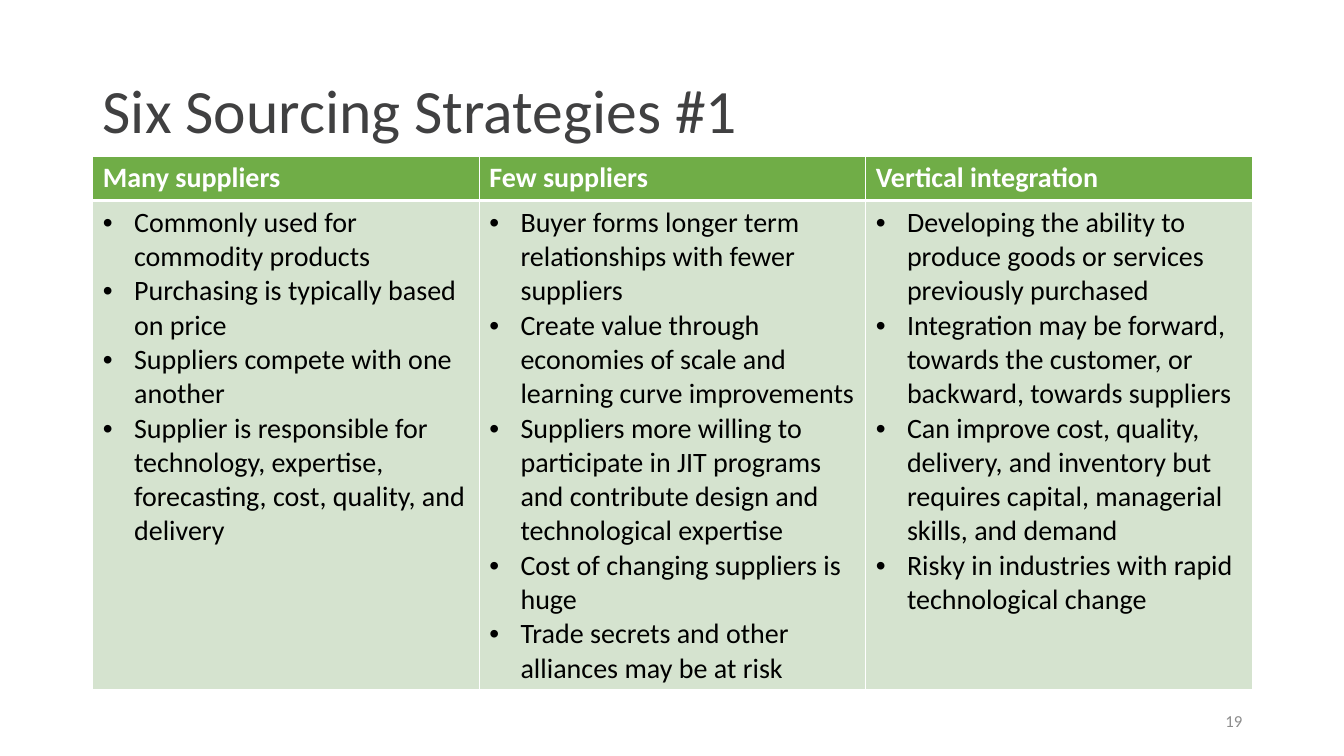
from lxml.etree import SubElement
from pptx import Presentation
from pptx.dml.color import RGBColor
from pptx.enum.text import MSO_ANCHOR, PP_ALIGN
from pptx.oxml.ns import qn
from pptx.util import Inches, Pt

COLORS = {
    "title": "404041",
    "head": "70AD47",
    "body": "D5E3CF",
    "white": "FFFFFF",
    "black": "000000",
    "number": "8C8C8C",
}

PLANS = {
    "Many suppliers": [
        "Commonly used for commodity products",
        "Purchasing is typically based on price",
        "Suppliers compete with one another",
        "Supplier is responsible for technology, expertise, forecasting, cost, quality, and delivery",
    ],
    "Few suppliers": [
        "Buyer forms longer term relationships with fewer suppliers",
        "Create value through economies of scale and learning curve improvements",
        "Suppliers more willing to participate in JIT programs and contribute design and technological expertise",
        "Cost of changing suppliers is huge",
        "Trade secrets and other alliances may be at risk",
    ],
    "Vertical integration": [
        "Developing the ability to produce goods or services previously purchased",
        "Integration may be forward, towards the customer, or backward, towards suppliers",
        "Can improve cost, quality, delivery, and inventory but requires capital, managerial skills, and demand",
        "Risky in industries with rapid technological change",
    ],
}


def style(para, size, color, bold=False):
    """Set the font of a paragraph."""
    font = para.font
    font.name = "Calibri"
    font.size = Pt(size)
    font.bold = bold
    font.color.rgb = RGBColor.from_string(COLORS[color])


def add_label(slide, box, text, size, color, align=PP_ALIGN.LEFT, spacing=1.0):
    """Place one line of text, centred vertically in its box."""
    frame = slide.shapes.add_textbox(*map(Inches, box)).text_frame
    frame.word_wrap = True
    frame.vertical_anchor = MSO_ANCHOR.MIDDLE
    para = frame.paragraphs[0]
    para.text = text
    para.alignment = align
    para.line_spacing = spacing
    style(para, size, color)


def add_bullet(para):
    """Give a paragraph a hanging round bullet."""
    props = para._p.get_or_add_pPr()
    props.set("marL", str(Inches(0.31)))
    props.set("indent", str(-Inches(0.31)))
    SubElement(props, qn("a:buFont"), typeface="Arial")
    SubElement(props, qn("a:buChar"), char="•")


def paint(cell, color, base):
    """Give a cell white borders and a solid fill."""
    props = cell._tc.get_or_add_tcPr()
    for side, width in (("L", 1), ("R", 1), ("T", 1), ("B", base)):
        line = SubElement(props, qn(f"a:ln{side}"), w=str(Pt(width)))
        fill = SubElement(line, qn("a:solidFill"))
        SubElement(fill, qn("a:srgbClr"), val=COLORS["white"])
    cell.fill.solid()
    cell.fill.fore_color.rgb = RGBColor.from_string(COLORS[color])


def add_plans(slide, box, head):
    """Build the table with one column for each strategy."""
    table = slide.shapes.add_table(2, len(PLANS), *map(Inches, box)).table
    table.rows[0].height = Inches(head)
    table.rows[1].height = Inches(box[3] - head)
    for col, (name, points) in enumerate(PLANS.items()):
        table.columns[col].width = Inches(box[2] / len(PLANS))
        top, body = table.cell(0, col), table.cell(1, col)
        paint(top, "head", 3)
        paint(body, "body", 1)
        top.text = name
        style(top.text_frame.paragraphs[0], 20, "white", True)
        body.text = "\n".join(points)
        for para in body.text_frame.paragraphs:
            add_bullet(para)
            style(para, 20, "black")


def main():
    """Build and save the slide."""
    deck = Presentation()
    deck.slide_width, deck.slide_height = Inches(13.33), Inches(7.5)
    slide = deck.slides.add_slide(deck.slide_layouts[6])
    add_label(slide, (0.92, 0.4, 11.5, 1.45), "Six Sourcing Strategies #1", 44, "title", spacing=0.9)
    add_plans(slide, (0.92, 1.55, 11.5, 5.29), 0.44)
    add_label(slide, (9.42, 6.95, 3, 0.4), "19", 12, "number", PP_ALIGN.RIGHT)
    deck.save("out.pptx")


if __name__ == "__main__":
    main()
